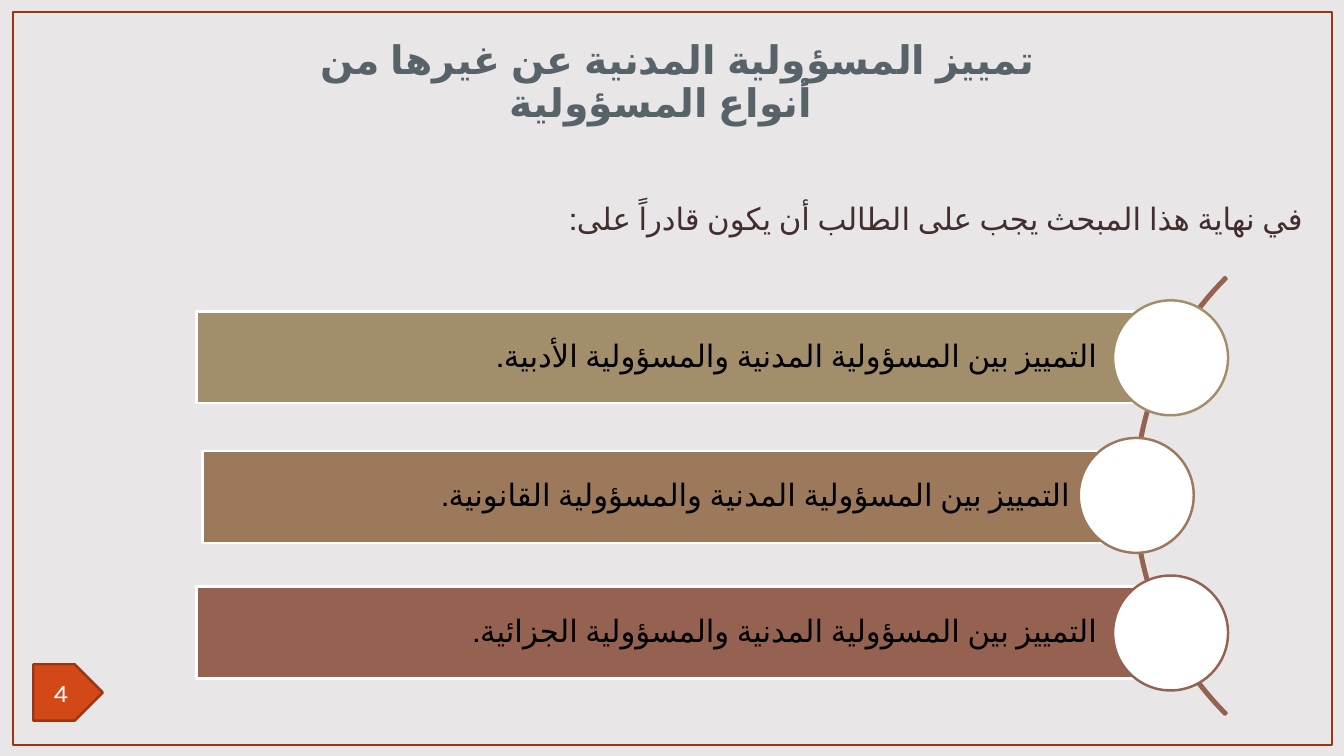
from collections import namedtuple

from pptx import Presentation
from pptx.dml.color import RGBColor
from pptx.enum.shapes import MSO_SHAPE as Shape
from pptx.enum.text import MSO_ANCHOR as Anchor, PP_ALIGN as Align
from pptx.util import Inches, Pt

Box = namedtuple("Box", "left top width height")

COLORS = {
    "ground": "E9E6E7", "frame": "9C3511", "tag": "D34817",
    "title": "576368", "intro": "422E2E", "white": "FFFFFF",
    "black": "000000", "sand": "A28E6A", "tan": "9D795C", "clay": "956251",
}
GOALS = [
    ("التمييز بين المسؤولية المدنية والمسؤولية الأدبية.", "sand", 1.64, 0.11, 9.65, 10.73),
    ("التمييز بين المسؤولية المدنية والمسؤولية القانونية.", "tan", 1.7, 0.13, 9.32, 10.39),
    ("التمييز بين المسؤولية المدنية والمسؤولية الجزائية.", "clay", 1.64, 0.11, 9.65, 10.73),
]


def color(name):
    return RGBColor.from_string(COLORS[name])


def set_all(target, values):
    for name, value in values.items():
        setattr(target, name, value)


def add_box(page, kind, box, fill=None, line=None):
    shape = page.shapes.add_shape(kind, *map(Inches, box))
    shape.shadow.inherit = False
    if fill:
        shape.fill.solid()
        shape.fill.fore_color.rgb = color(fill)
    else:
        shape.fill.background()
    shape.line.color.rgb = color(line)
    shape.line.width = Pt(1.75)
    return shape


def write(shape, text, ink, font, layout, frame, rtl=True, hanging=0):
    set_all(shape.text_frame, {"word_wrap": True, **frame})
    para = shape.text_frame.paragraphs[0]
    set_all(para, layout)
    span = para.add_run()
    span.text = text
    set_all(span.font, font)
    span.font.color.rgb = color(ink)
    if rtl:
        props = para._p.get_or_add_pPr()
        props.set("rtl", "1")
        props.set("marL", str(Inches(hanging)))
        props.set("indent", str(-Inches(hanging)))
        span._r.get_or_add_rPr().set("lang", "ar-SA")


def draw_frame(page, box):
    page.background.fill.solid()
    page.background.fill.fore_color.rgb = color("ground")
    add_box(page, Shape.RECTANGLE, box, line="frame")
    tag = add_box(page, Shape.PENTAGON,
                  Box(box.left + 0.2, box.top + 6.47, 0.69, 0.56), "tag", "frame")
    write(tag, "4", "white", {"name": "Karla", "size": Pt(18)},
          {"alignment": Align.CENTER},
          {"vertical_anchor": Anchor.MIDDLE, "margin_left": 0, "margin_right": 0},
          rtl=False)


def draw_title(page, box):
    title = page.shapes.add_textbox(*map(Inches, box))
    write(title, "تمييز المسؤولية المدنية عن غيرها من أنواع المسؤولية", "title",
          {"name": "Calibri", "size": Pt(28.1), "bold": True},
          {"alignment": Align.CENTER, "line_spacing": 0.9},
          {"vertical_anchor": Anchor.MIDDLE}, hanging=0.33)


def draw_intro(page, box):
    intro = page.shapes.add_textbox(*map(Inches, box))
    write(intro, "في نهاية هذا المبحث يجب على الطالب أن يكون قادراً على:", "intro",
          {"name": "Arial", "size": Pt(22)},
          {"alignment": Align.JUSTIFY, "line_spacing": 1.5},
          {"vertical_anchor": Anchor.TOP}, hanging=0.33)


def draw_arc(page, box):
    arc = add_box(page, Shape.BLOCK_ARC, box, line="clay")
    for place, value in enumerate((81, 135, 0.004)):
        arc.adjustments[place] = value


def draw_goals(page, box):
    draw_arc(page, Box(box.left + 10.94, box.top - 0.9, 6.14, 6.14))
    pitch, diameter = 1.365, 1.14
    for row, (text, tone, bar_left, bar_drop, bar_width, dot_left) in enumerate(GOALS):
        top = box.top + 0.23 + row * pitch
        bar = add_box(page, Shape.RECTANGLE,
                      Box(box.left + bar_left, top + bar_drop, bar_width, 0.91),
                      tone, "white")
        write(bar, text, "black", {"name": "Arial", "size": Pt(22)},
              {"alignment": Align.RIGHT, "line_spacing": 0.9},
              {"vertical_anchor": Anchor.MIDDLE, "margin_left": Inches(0.06),
               "margin_right": Inches(0.72), "margin_top": Inches(0.06),
               "margin_bottom": Inches(0.06)})
        add_box(page, Shape.OVAL,
                Box(box.left + dot_left, top, diameter, diameter), "white", tone)


def main():
    deck = Presentation()
    deck.slide_width, deck.slide_height = Inches(13.33), Inches(7.5)
    page = deck.slides.add_slide(deck.slide_layouts[6])
    draw_frame(page, Box(0.13, 0.12, 13.08, 7.27))
    draw_title(page, Box(2.96, 0.31, 7.52, 1.03))
    draw_intro(page, Box(0.31, 1.75, 12.71, 0.8))
    draw_goals(page, Box(0.31, 2.75, 12.71, 4.34))
    deck.save("out.pptx")


if __name__ == "__main__":
    main()
